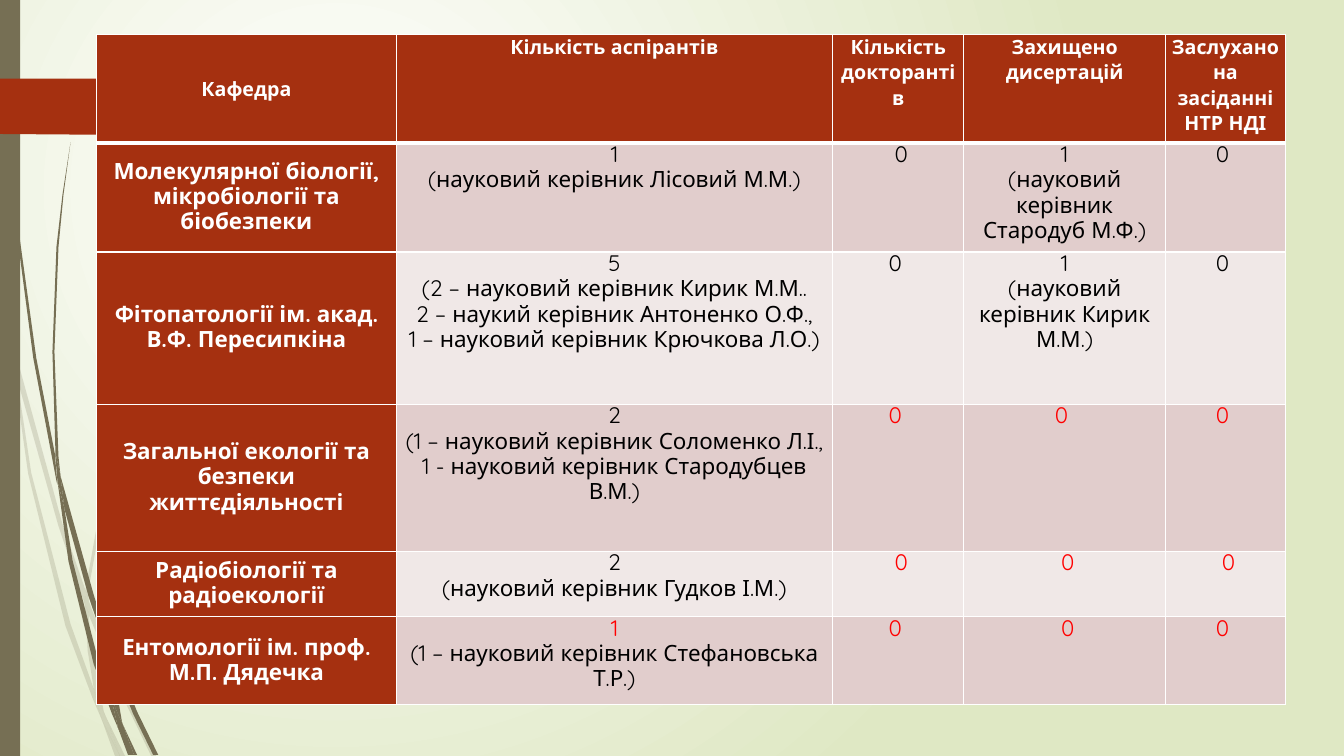
from lxml import etree
from pptx import Presentation
from pptx.dml.color import RGBColor
from pptx.enum.shapes import MSO_SHAPE
from pptx.enum.text import MSO_ANCHOR, PP_ALIGN
from pptx.oxml.ns import qn
from pptx.util import Inches, Pt

RECTANGLE = MSO_SHAPE.RECTANGLE
CENTER = PP_ALIGN.CENTER
MIDDLE, TOP = MSO_ANCHOR.MIDDLE, MSO_ANCHOR.TOP
FONT = "Quicksand"
COLORS = {
    "white": "FFFFFF", "black": "000000", "red": "FF0000", "olive": "766F54",
    "rust": "A53010", "meadow": "DFE8C4", "rose": "E1CDCC", "pale": "F0E8E7",
}

COLUMN_WIDTHS = [2.97, 4.33, 1.3, 2, 1.19]
ROW_HEIGHTS = [1.08, 1.08, 1.51, 1.46, 0.65, 0.87]
ROWS = [
    ["Кафедра", "Кількість аспірантів", "Кількість докторантів",
     "Захищено\nдисертацій", "Заслухано на засіданні НТР НДІ"],
    ["Молекулярної біології, мікробіології та біобезпеки",
     "1\n(науковий керівник Лісовий М.М.)", " 0",
     "1\n(науковий керівник Стародуб М.Ф.)", "0 "],
    ["Фітопатології ім. акад. В.Ф. Пересипкіна",
     "5\n(2 – науковий керівник Кирик М.М..\n2 – наукий керівник Антоненко О.Ф.,\n"
     "1 – науковий керівник Крючкова Л.О.)", "0 ",
     "1\n(науковий керівник Кирик М.М.)", "0 "],
    ["Загальної екології та безпеки життєдіяльності",
     "2\n(1 – науковий керівник Соломенко Л.І.,\n"
     "1 - науковий керівник Стародубцев В.М.)", "0 ", "0 ", "0 "],
    ["Радіобіології та радіоекології", "2\n(науковий керівник Гудков І.М.)",
     " 0", " 0", " 0"],
    ["Ентомології ім. проф. М.П. Дядечка",
     "1\n(1 – науковий керівник Стефановська Т.Р.)", "0 ", " 0", "0 "],
]

FAINT_STALKS = [
    [(0.11, 3.5), (0.09, 3.22), (0, 2.82), (0, 2.99), (0.1, 3.44)],
    [(0.58, 5.22), (0.84, 5.99), (0.85, 5.86), (0.62, 5.2), (0.14, 3.45), (0.17, 3.76)],
    [(0.92, 6.07), (0.88, 5.96), (0.88, 6.1), (1.23, 6.94), (1.5, 7.5), (1.55, 7.5),
     (1.27, 6.92)],
    [(1.19, 7.5), (1.24, 7.5), (1.05, 7.11)],
    [(0.93, 6.83), (0.7, 6.19), (0.31, 4.69), (0.17, 3.76), (0.11, 3.5), (0.28, 4.7),
     (0.65, 6.21), (0.92, 6.93), (1.01, 7.14), (0.99, 7.07)],
    [(0.84, 5.99), (0.87, 6.46), (0.93, 6.83), (0.96, 6.92), (1.05, 7.11), (1.03, 7.06),
     (0.91, 6.46), (0.88, 6.1), (0.88, 6.08)],
    [(0.88, 5.84), (1.1, 4.62), (1.6, 3.49), (2.29, 2.45), (2.68, 1.98), (2.9, 1.75),
     (3.12, 1.54), (3.12, 1.53), (2.89, 1.75), (2.68, 1.97), (2.28, 2.44), (1.58, 3.48),
     (1.07, 4.61), (0.85, 5.84), (0.85, 5.86), (0.88, 5.96)],
    [(1.01, 7.14), (1.14, 7.5), (1.19, 7.5)],
    [(0.88, 6.08), (0.88, 5.96), (0.85, 5.86), (0.84, 5.99)],
    [(0.96, 6.92), (0.93, 6.83), (0.99, 7.07), (1.01, 7.14), (1.19, 7.5), (1.05, 7.11)],
]
STALKS = [
    [(0.07, 1.1), (0.17, 2.33), (0.33, 3.55), (0.56, 4.77), (0.57, 4.81), (0.55, 4.57),
     (0.55, 4.53), (0.36, 3.55), (0.19, 2.32), (0.08, 1.09), (0.05, 0.48), (0.04, 0),
     (0.03, 0), (0.04, 0.48)],
    [(0.88, 5.92), (1.06, 6.45), (1.06, 6.31), (0.93, 5.9), (0.6, 4.72), (0.64, 5.05)],
    [(1.13, 6.49), (1.1, 6.41), (1.11, 6.56), (1.32, 7.08), (1.52, 7.49), (1.57, 7.49),
     (1.36, 7.06)],
    [(1.1, 6.91), (0.98, 6.57), (0.72, 5.56), (0.64, 5.05), (0.57, 4.77), (0.68, 5.57),
     (0.93, 6.59), (1.11, 7.08), (1.17, 7.22), (1.16, 7.17)],
    [(0.6, 4.72), (0.58, 4.53), (0.54, 3.49), (0.58, 2.45), (0.63, 1.93), (0.7, 1.41),
     (0.62, 1.93), (0.56, 2.45), (0.52, 3.49), (0.55, 4.49)],
    [(1.33, 7.49), (1.36, 7.49), (1.22, 7.19)],
    [(0.57, 4.77), (0.64, 5.05), (0.6, 4.72), (0.55, 4.49), (0.55, 4.53)],
    [(1.11, 6.33), (1.25, 5.52), (1.58, 4.76), (2.05, 4.06), (2.31, 3.74), (2.45, 3.59),
     (2.61, 3.44), (2.45, 3.58), (2.31, 3.73), (2.04, 4.05), (1.56, 4.74), (1.22, 5.51),
     (1.06, 6.31), (1.1, 6.41)],
    [(1.17, 7.22), (1.27, 7.49), (1.31, 7.49)],
    [(1.06, 6.45), (1.1, 6.91), (1.16, 7.06), (1.22, 7.19), (1.21, 7.16), (1.11, 6.56),
     (1.09, 6.51)],
    [(1.06, 6.45), (1.09, 6.51), (1.11, 6.56), (1.1, 6.41), (1.06, 6.31)],
    [(1.16, 7.06), (1.1, 6.91), (1.16, 7.17), (1.17, 7.22), (1.3, 7.49), (1.33, 7.49),
     (1.22, 7.19)],
]
RIBBON = [(1.73, 1.08), (1.48, 1.33), (1.46, 1.34), (1.36, 1.34), (0, 1.33), (0, 0.78),
          (1.46, 0.78), (1.48, 0.79), (1.73, 1.04), (1.74, 1.06)]


def color(name):
    """Return the named colour."""
    return RGBColor.from_string(COLORS[name])


def paint_background(page):
    """Fill the page with a glow that spreads from its upper left."""
    fill = page.background.fill
    fill.gradient()
    for stop, name, position in zip(fill.gradient_stops, ("white", "meadow"), (0, 1)):
        stop.color.rgb = color(name)
        stop.position = position
    gradient = page.background._cSld.find(".//" + qn("a:gradFill"))
    gradient.remove(gradient.find(qn("a:lin")))
    glow = etree.SubElement(gradient, qn("a:path"), path="circle")
    etree.SubElement(glow, qn("a:fillToRect"), l="50000", t="50000", r="100000", b="100000")


def paint_shape(shape, fill, opacity=100):
    """Give a shape a flat fill without outline or shadow."""
    shape.shadow.inherit = False
    shape.line.fill.background()
    shape.fill.solid()
    shape.fill.fore_color.rgb = color(fill)
    if opacity < 100:
        tint = shape._element.spPr.find(".//" + qn("a:srgbClr"))
        etree.SubElement(tint, qn("a:alpha"), val=str(opacity * 1000))


def add_outline(page, points, fill, opacity=100):
    """Draw a closed outline through points given in inches."""
    corners = [(Inches(x), Inches(y)) for x, y in points]
    builder = page.shapes.build_freeform(*corners[0])
    builder.add_line_segments(corners[1:], close=True)
    paint_shape(builder.convert_to_shape(), fill, opacity)


def add_borders(cell, **widths):
    """Draw white cell borders with widths in points, keyed by side."""
    properties = cell._tc.get_or_add_tcPr()
    for side, width in widths.items():
        line = etree.SubElement(properties, qn("a:ln" + side), w=str(Pt(width)))
        solid = etree.SubElement(line, qn("a:solidFill"))
        etree.SubElement(solid, qn("a:srgbClr"), val=COLORS["white"])


def write_cell(cell, text, *, size, colors, bold, fill, anchor, margin):
    """Write one paragraph per line of text and format the cell."""
    cell.margin_left = cell.margin_right = Inches(margin)
    cell.margin_top = cell.margin_bottom = 0
    cell.vertical_anchor = anchor
    cell.fill.solid()
    cell.fill.fore_color.rgb = color(fill)
    frame = cell.text_frame
    for index, line in enumerate(text.split("\n")):
        para = frame.add_paragraph() if index else frame.paragraphs[0]
        para.alignment = CENTER
        para.line_spacing = Pt(18)
        span = para.add_run()
        span.text = line
        span.font.name = FONT
        span.font.size = Pt(size)
        span.font.bold = bold
        span.font.color.rgb = color(colors[min(index, len(colors) - 1)])


def text_colors(row, column):
    """Return the colours of a cell's paragraphs, the last one repeating."""
    if row == 0 or column == 0:
        return ["white"]
    if row >= 3 and column >= 2:
        return ["red"]
    return ["red", "black"] if row == 5 else ["black"]


def add_department_table(page):
    """Add the table of departments."""
    frame = page.shapes.add_table(len(ROWS), len(COLUMN_WIDTHS), Inches(0.96), Inches(0.34),
                                  Inches(11.8), Inches(6.64))
    table = frame.table
    for column, width in zip(table.columns, COLUMN_WIDTHS):
        column.width = Inches(width)
    for row, height in zip(table.rows, ROW_HEIGHTS):
        row.height = Inches(height)
    for row, texts in enumerate(ROWS):
        band = "rose" if row % 2 else "pale"
        for column, text in enumerate(texts):
            cell = table.cell(row, column)
            heading = row == 0 or column == 0
            add_borders(cell, L=1, R=1, T=3 if row == 1 else 1, B=1 if row else 3)
            write_cell(cell, text, size=16 if row else 14, bold=heading,
                       colors=text_colors(row, column), fill="rust" if heading else band,
                       anchor=TOP if column else MIDDLE, margin=0.06 if row else 0.03)


def main():
    """Build and save the slide."""
    deck = Presentation()
    deck.slide_width, deck.slide_height = Inches(13.33), Inches(7.5)
    page = deck.slides.add_slide(deck.slide_layouts.get_by_name("Blank"))
    paint_background(page)
    for stalk in FAINT_STALKS:
        add_outline(page, stalk, "olive", opacity=20)
    for stalk in STALKS:
        add_outline(page, stalk, "olive")
    strip = page.shapes.add_shape(RECTANGLE, 0, 0, Inches(0.2), Inches(7.5))
    paint_shape(strip, "olive")
    add_outline(page, RIBBON, "rust")
    add_department_table(page)
    deck.save("out.pptx")


if __name__ == "__main__":
    main()
